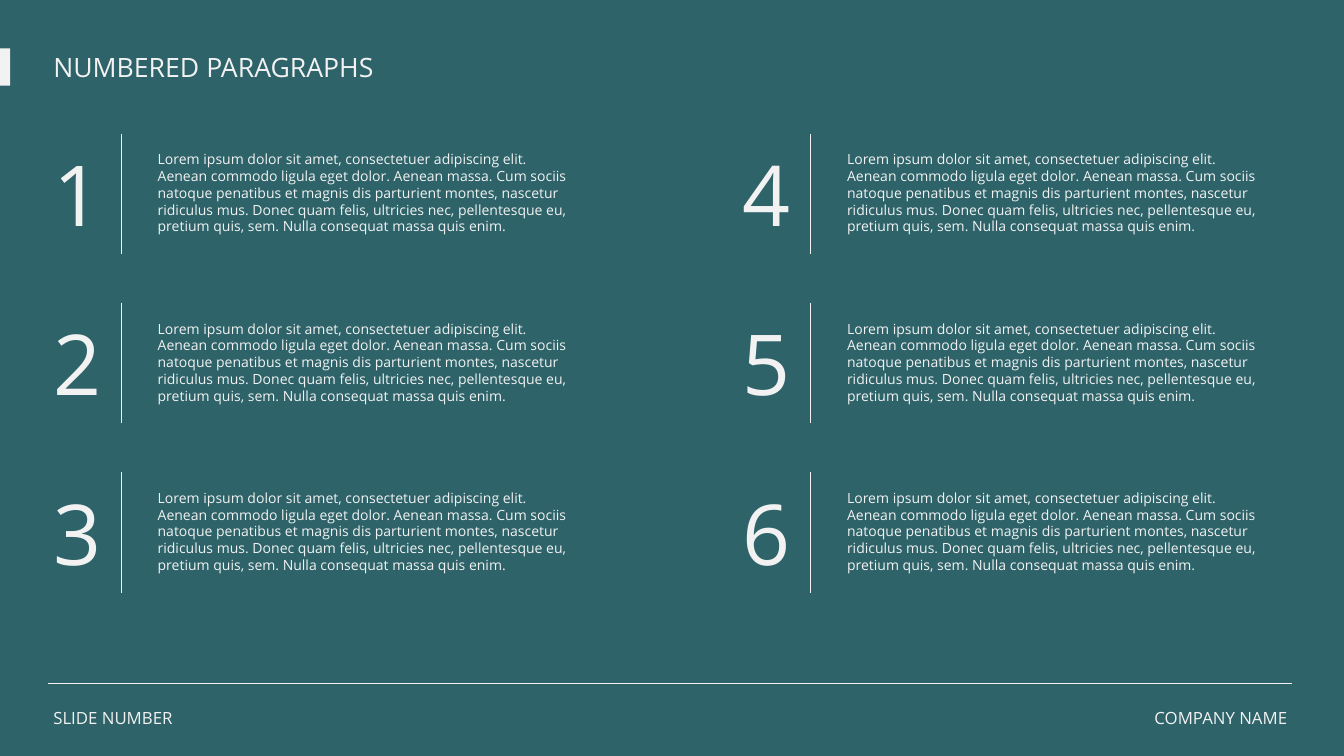
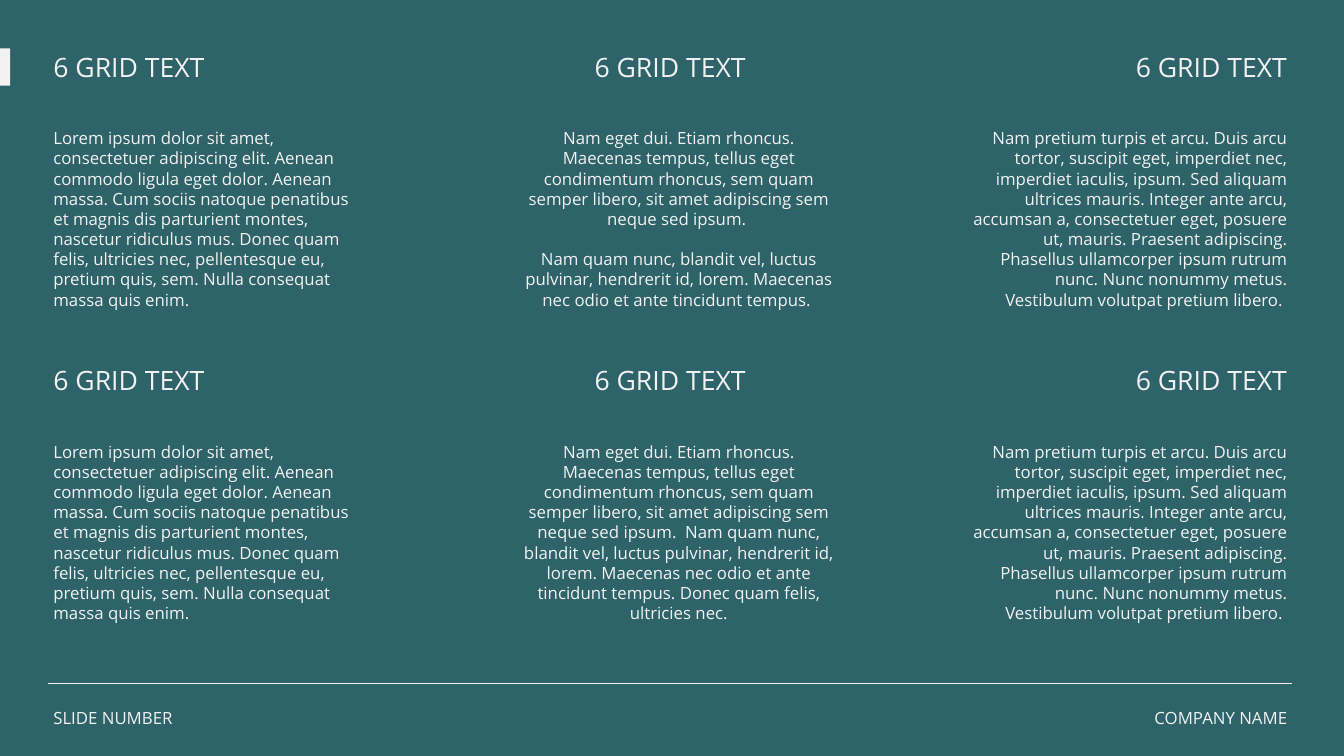
from itertools import product

from lxml.etree import SubElement
from pptx import Presentation
from pptx.dml.color import RGBColor
from pptx.enum.shapes import MSO_CONNECTOR as Conn, MSO_SHAPE as Geo
from pptx.enum.text import MSO_AUTO_SIZE as Auto, PP_ALIGN as Align
from pptx.oxml.ns import qn
from pptx.util import Inches, Pt

TEAL = RGBColor(0x2D, 0x63, 0x69)
PALE = RGBColor(0xF2, 0xF2, 0xF2)
FONT = "Open Sans"

LOREM = (
    "Lorem ipsum dolor sit amet, consectetuer adipiscing elit. Aenean commodo "
    "ligula eget dolor. Aenean massa. Cum sociis natoque penatibus et magnis dis "
    "parturient montes, nascetur ridiculus mus. Donec quam felis, ultricies nec, "
    "pellentesque eu, pretium quis, sem. Nulla consequat massa quis enim."
)
NAM = (
    "Nam eget dui. Etiam rhoncus. Maecenas tempus, tellus eget condimentum "
    "rhoncus, sem quam semper libero, sit amet adipiscing sem neque sed ipsum. "
)
QUAM = (
    "Nam quam nunc, blandit vel, luctus pulvinar, hendrerit id, lorem. "
    "Maecenas nec odio et ante tincidunt tempus. "
)
TURPIS = (
    "Nam pretium turpis et arcu. Duis arcu tortor, suscipit eget, imperdiet nec, "
    "imperdiet iaculis, ipsum. Sed aliquam ultrices mauris. Integer ante arcu, "
    "accumsan a, consectetuer eget, posuere ut, mauris. Praesent adipiscing. "
    "Phasellus ullamcorper ipsum rutrum nunc. Nunc nonummy metus. "
    "Vestibulum volutpat pretium libero. "
)
LIST_HEAD = "NUMBERED PARAGRAPHS"
ITEMS = [LOREM] * 6
GRID_HEAD = "6 GRID TEXT"
GRID = [
    [[LOREM], [NAM, QUAM], [TURPIS]],
    [[LOREM], [NAM + " " + QUAM + "Donec quam felis, ultricies nec."], [TURPIS]],
]
FOOT = ("SLIDE NUMBER", "COMPANY NAME")

WIDE, HIGH = 26.67, 15
LEFT, TOP = 0.96, 0.96
RIGHT = 25.64
HEAD_W, HEAD_H = 7.14, 0.74

# Numbered list: three rows down, then the next column
ROWS, ROW_GAP, COL_GAP = 3, 3.36, 13.68
RULE_TOP, RULE_H = 2.65, 2.39

# Text grid: left, width and alignment of each column's body
COLS = [
    (LEFT, 6.42, Align.LEFT),
    (10.26, 6.42, Align.CENTER),
    (RIGHT - 6.52, 6.52, Align.RIGHT),
]
BAND = 6.22


def write(slide, text, x, y, w, h, size=24, align=Align.LEFT, gap=0):
    """Place text, given as one string or a list of paragraphs."""
    box = slide.shapes.add_textbox(Inches(x), Inches(y), Inches(w), Inches(h))
    frame = box.text_frame
    frame.word_wrap = True
    frame.auto_size = Auto.SHAPE_TO_FIT_TEXT
    parts = [text] if isinstance(text, str) else text
    for i, part in enumerate(parts):
        para = frame.add_paragraph() if i else frame.paragraphs[0]
        para.alignment = align
        if i:
            para.space_before = Pt(gap)
        run = para.add_run()
        run.text = part
        run.font.name = FONT
        run.font.size = Pt(size)
        run.font.color.rgb = PALE


def rule(slide, x, y, w=0, h=0, pts=1):
    line = slide.shapes.add_connector(
        Conn.STRAIGHT, Inches(x), Inches(y), Inches(x + w), Inches(y + h)
    )
    line.line.color.rgb = PALE
    line.line.width = Pt(pts)
    SubElement(line._element.spPr, qn("a:effectLst"))


def head(slide, text, x=LEFT, y=TOP, align=Align.LEFT):
    write(slide, text, x, y, HEAD_W, HEAD_H, size=38, align=align)


def start(deck):
    """Add a slide with the shared background, tab and footer."""
    slide = deck.slides.add_slide(deck.slide_layouts[6])
    fill = slide.background.fill
    fill.solid()
    fill.fore_color.rgb = TEAL
    tab = slide.shapes.add_shape(
        Geo.RECTANGLE, 0, Inches(TOP), Inches(0.2), Inches(HEAD_H)
    )
    tab.shadow.inherit = False
    tab.fill.solid()
    tab.fill.fore_color.rgb = PALE
    tab.line.fill.background()
    rule(slide, LEFT, 13.56, w=RIGHT - LEFT, pts=1.75)
    write(slide, FOOT[0], LEFT, 14, 2.8, 0.5)
    write(slide, FOOT[1], RIGHT - 3.1, 14, 3.1, 0.5, align=Align.RIGHT)
    return slide


def list_slide(deck):
    slide = start(deck)
    head(slide, LIST_HEAD)
    for i, text in enumerate(ITEMS):
        col, row = divmod(i, ROWS)
        x = LEFT + col * COL_GAP
        y = RULE_TOP + row * ROW_GAP
        write(slide, str(i + 1), x, y + 0.13, 0.41, 2.12, size=120)
        rule(slide, x + 1.44, y, h=RULE_H)
        write(slide, text, x + 2.07, y + 0.29, 8.52, 1.78, size=20)


def grid_slide(deck):
    slide = start(deck)
    step = (RIGHT - LEFT - HEAD_W) / (len(COLS) - 1)
    for row, col in product(range(len(GRID)), range(len(COLS))):
        x, w, align = COLS[col]
        y = TOP + row * BAND
        head(slide, GRID_HEAD, LEFT + col * step, y, align)
        write(slide, GRID[row][col], x, y + 1.53, w, 3.74, align=align, gap=28.8)


def main():
    deck = Presentation()
    deck.slide_width, deck.slide_height = Inches(WIDE), Inches(HIGH)
    list_slide(deck)
    grid_slide(deck)
    deck.save("out.pptx")


if __name__ == "__main__":
    main()
